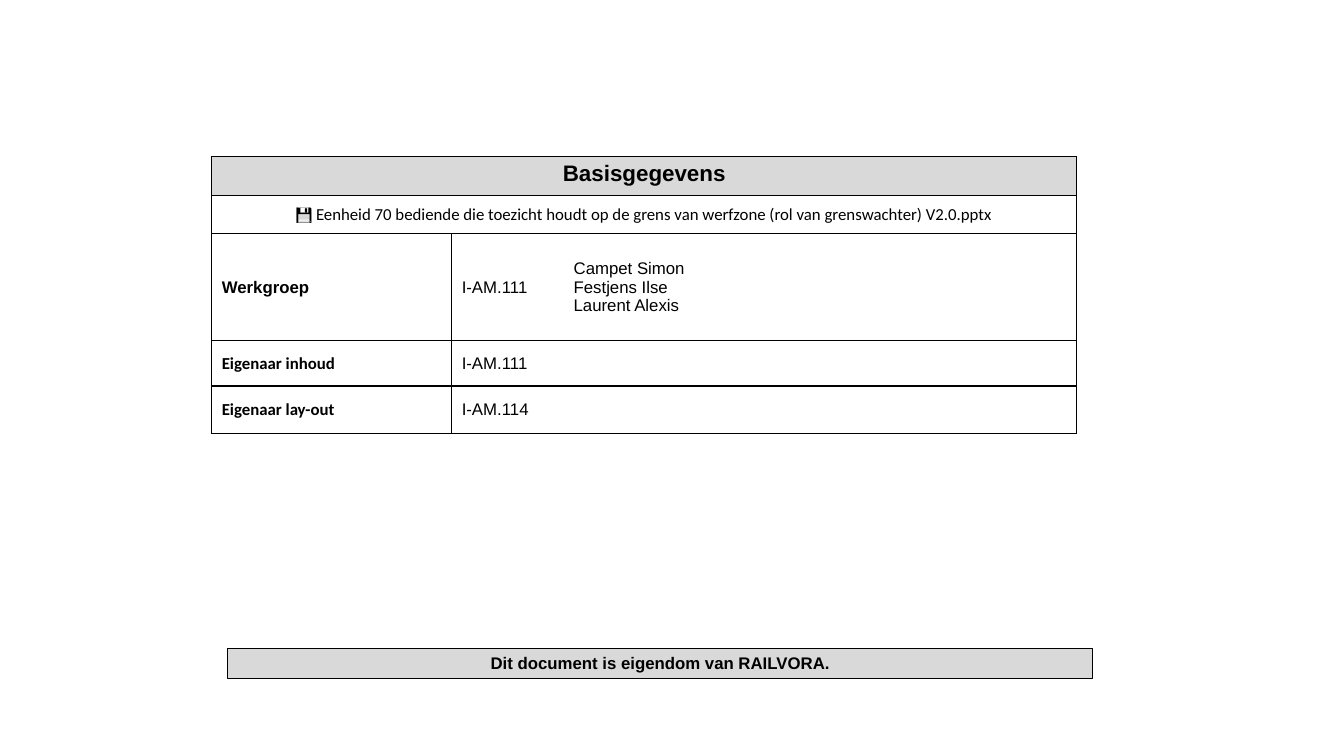
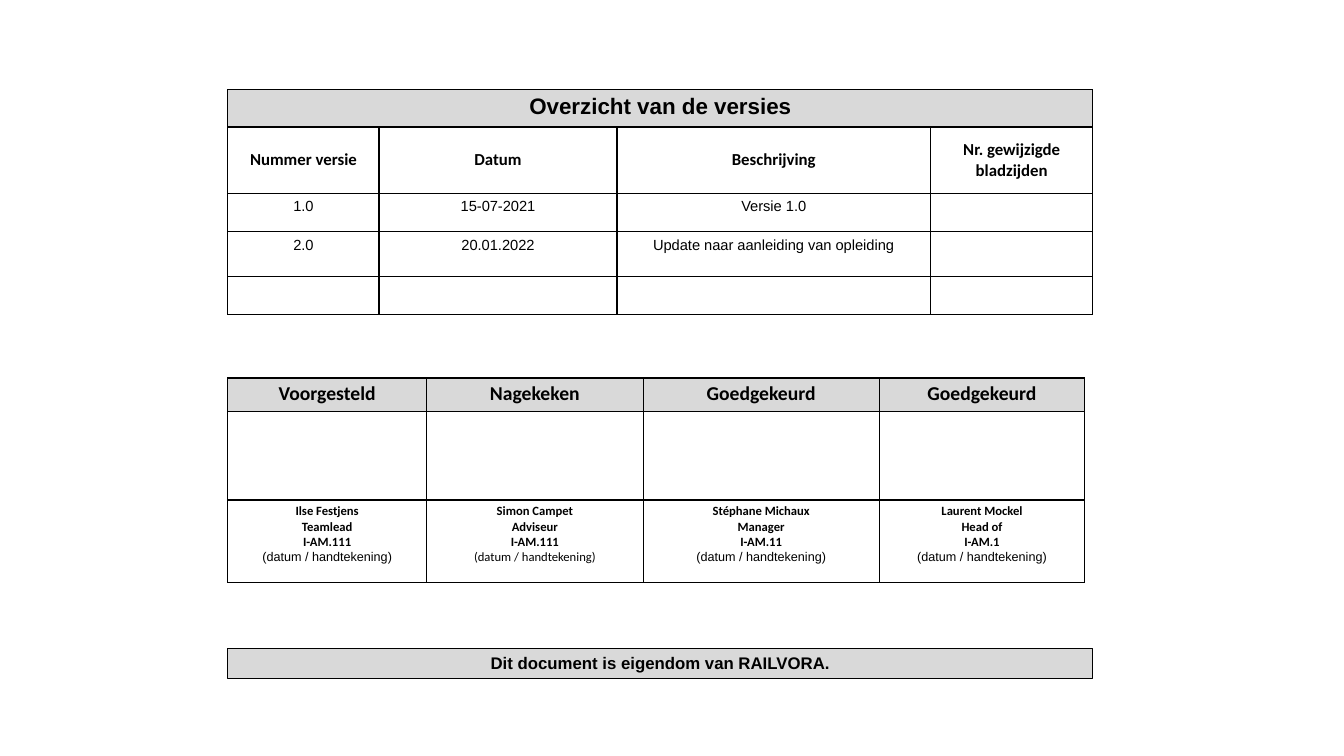
from collections import namedtuple

from lxml import etree
from pptx import Presentation
from pptx import util as u
from pptx.dml.color import RGBColor
from pptx.enum import shapes, text
from pptx.oxml.ns import qn

PX = 9144  # EMU in one px, 100 px to the inch
BLACK = RGBColor(0x00, 0x00, 0x00)
WHITE = RGBColor(0xFF, 0xFF, 0xFF)
GREY = RGBColor(0xD9, 0xD9, 0xD9)

CENTER, LEFT = text.PP_ALIGN.CENTER, text.PP_ALIGN.LEFT
TOP, MIDDLE = text.MSO_ANCHOR.TOP, text.MSO_ANCHOR.MIDDLE

Font = namedtuple("Font", "name size bold")
HEADING = Font("Arial", 16, True)
STRONG = Font("Arial", 12, True)
BODY = Font("Arial", 12, False)
LABEL = Font("Calibri", 12, True)
FILE_NAME = Font("Calibri", 12, False)
ENTRY = Font("Arial", 10.5, False)
SIGN_HEADING = Font("Calibri", 14, True)
SIGNER = Font("Calibri", 9, True)
SIGN_HINT = Font("Arial", 9, False)


class Deck:
    """Holds the shared style and the current slide."""

    def __init__(self):
        self.prs = Presentation()
        self.prs.slide_width, self.prs.slide_height = 1333 * PX, 750 * PX
        self.s = None

    def slide(self):
        self.s = self.prs.slides.add_slide(self.prs.slide_layouts[6])
        self.footer("Dit document is eigendom van RAILVORA.")

    def footer(self, line):
        sp = self.s.shapes.add_shape(
            shapes.MSO_SHAPE.RECTANGLE, 226 * PX, 643 * PX, 858 * PX, 30 * PX)
        sp.shadow.inherit = False
        sp.fill.solid()
        sp.fill.fore_color.rgb = GREY
        sp.line.color.rgb = BLACK
        sp.line.width = u.Pt(0.75)
        tf = sp.text_frame
        tf.word_wrap = True
        tf.auto_size = text.MSO_AUTO_SIZE.SHAPE_TO_FIT_TEXT
        self.put_lines(tf, [(line, STRONG)], CENTER)

    def put_lines(self, tf, lines, align):
        """Set (words, font) pairs, one paragraph each."""
        for i, (words, font) in enumerate(lines):
            p = tf.add_paragraph() if i else tf.paragraphs[0]
            p.alignment = align
            r = p.add_run()
            r.text = words
            r.font.name, r.font.bold = font.name, font.bold
            r.font.size = u.Pt(font.size)
            r.font.color.rgb = BLACK

    def table(self, x, y, cols, rows):
        """Add a white table with a black grid."""
        t = self.s.shapes.add_table(
            len(rows), len(cols), x * PX, y * PX,
            sum(cols) * PX, sum(rows) * PX).table
        t.first_row = t.horz_banding = False
        for col, width in zip(t.columns, cols):
            col.width = width * PX
        for row, height in zip(t.rows, rows):
            row.height = height * PX
        for cell in t.iter_cells():
            for side in "LRTB":
                self.border(cell, side)
            self.fill(cell, WHITE)
            # Keep empty cells from stretching their row
            etree.SubElement(cell.text_frame.paragraphs[0]._p,
                             qn("a:endParaRPr"), sz="1050")
        return t

    def border(self, cell, side):
        ln = etree.SubElement(cell._tc.get_or_add_tcPr(), qn("a:ln" + side),
                              w=str(int(u.Pt(1))))
        paint = etree.SubElement(ln, qn("a:solidFill"))
        etree.SubElement(paint, qn("a:srgbClr"), val=str(BLACK))

    def open_side(self, cell, side):
        """Remove the line on one side of a cell."""
        ln = cell._tc.tcPr.find(qn("a:ln" + side))
        ln.remove(ln[0])
        etree.SubElement(ln, qn("a:noFill"))

    def fill(self, cell, color):
        cell.fill.solid()
        cell.fill.fore_color.rgb = color

    def cell(self, t, row, col, lines, align=CENTER, anchor=MIDDLE,
             span=1, color=WHITE):
        c = t.cell(row, col)
        if span > 1:
            c.merge(t.cell(row, col + span - 1))
        c.vertical_anchor = anchor
        self.fill(c, color)
        self.put_lines(c.text_frame, lines, align)

    def heading(self, t, words):
        self.cell(t, 0, 0, [(words, HEADING)], anchor=TOP,
                  span=len(t.columns), color=GREY)


def basic_data(d):
    d.slide()
    t = d.table(210, 155, [238, 111, 357, 152], [39, 38, 106, 45, 47])
    d.heading(t, "Basisgegevens")
    d.cell(t, 1, 0, [("💾 Eenheid 70 bediende die toezicht houdt op de grens "
                      "van werfzone (rol van grenswachter) V2.0.pptx",
                      FILE_NAME)], span=4)
    # Labels, units and how many columns each unit takes
    rows = [("Werkgroep", STRONG, "I-AM.111", 1),
            ("Eigenaar inhoud", LABEL, "I-AM.111", 2),
            ("Eigenaar lay-out", LABEL, "I-AM.114", 3)]
    for i, (label, font, unit, span) in enumerate(rows, 2):
        d.cell(t, i, 0, [(label, font)], LEFT)
        d.cell(t, i, 1, [(unit, BODY)], LEFT, span=span)
    members = ["Campet Simon", "Festjens Ilse", "Laurent Alexis"]
    d.cell(t, 2, 2, [(name, BODY) for name in members], LEFT, span=2)
    # Units run on without a line into the next column
    for row, col in [(2, 1), (3, 2)]:
        for c in range(1, col + 1):
            d.open_side(t.cell(row, c), "R")
            d.open_side(t.cell(row, c + 1), "L")


def versions(d):
    d.slide()
    # Version history
    t = d.table(226, 89, [150, 236, 311, 161], [37, 66, 38, 44, 38])
    d.heading(t, "Overzicht van de versies")
    rows = [
        ("Nummer versie", "Datum", "Beschrijving", "Nr. gewijzigde bladzijden"),
        ("1.0", "15-07-2021", "Versie 1.0"),
        ("2.0", "20.01.2022", "Update naar aanleiding van opleiding"),
    ]
    for i, row in enumerate(rows, 1):
        font, anchor = (LABEL, MIDDLE) if i == 1 else (ENTRY, TOP)
        for j, words in enumerate(row):
            d.cell(t, i, j, [(words, font)], anchor=anchor)

    # Signatures
    t = d.table(226, 375, [197, 215, 234, 204], [33, 88, 82])
    hint_calibri = SIGN_HINT._replace(name="Calibri")
    signers = [
        ("Voorgesteld", "Ilse Festjens", "Teamlead", "I-AM.111", SIGN_HINT),
        ("Nagekeken", "Simon Campet", "Adviseur", "I-AM.111", hint_calibri),
        ("Goedgekeurd", "Stéphane Michaux", "Manager", "I-AM.11", SIGN_HINT),
        ("Goedgekeurd", "Laurent Mockel", "Head of", "I-AM.1", SIGN_HINT),
    ]
    for c in t.iter_cells():
        c.margin_left = c.margin_right = 7 * PX
        c.margin_top = c.margin_bottom = 4 * PX
    for j, (step, *signer, hint) in enumerate(signers):
        d.cell(t, 0, j, [(step, SIGN_HEADING)], anchor=TOP, color=GREY)
        lines = [(words, SIGNER) for words in signer]
        d.cell(t, 2, j, lines + [("(datum / handtekening)", hint)], anchor=TOP)


def main():
    d = Deck()
    basic_data(d)
    versions(d)
    d.prs.save("out.pptx")


if __name__ == "__main__":
    main()
